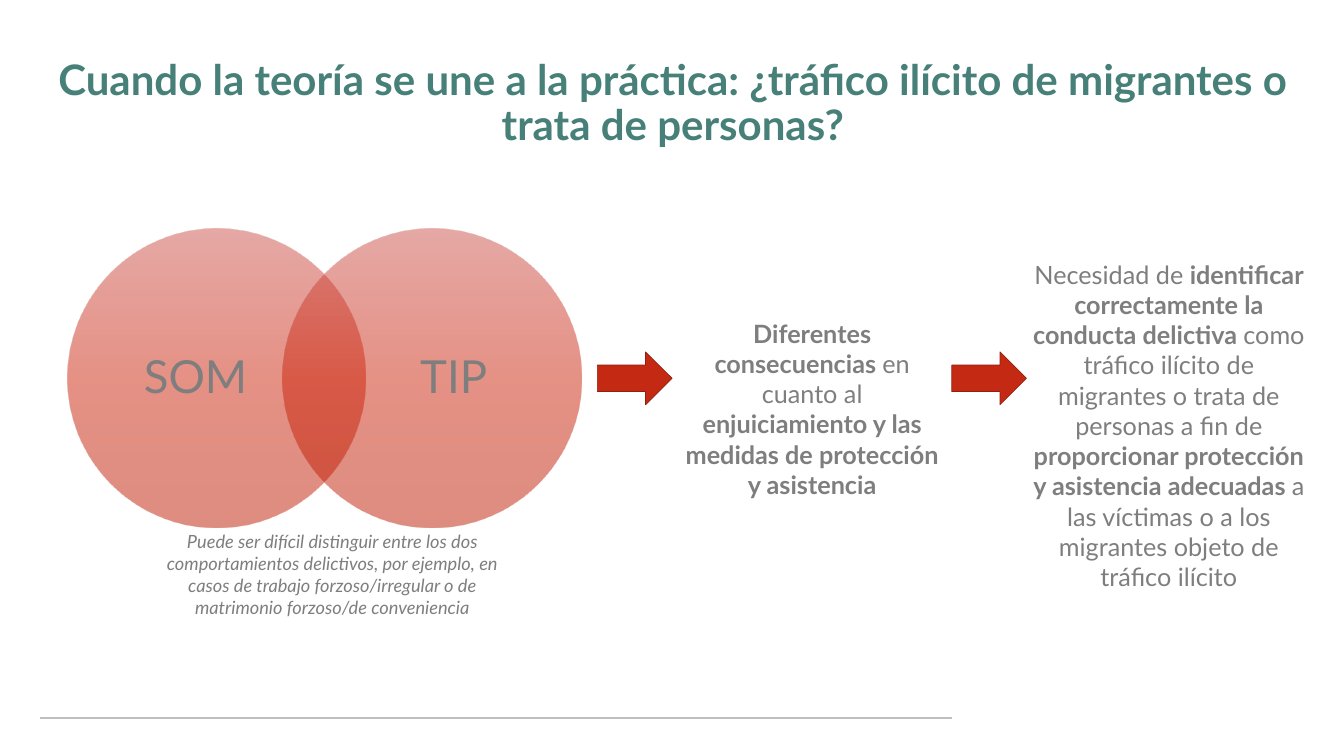
from dataclasses import dataclass

from lxml.etree import SubElement
from pptx import Presentation
from pptx.dml.color import RGBColor
from pptx.enum.shapes import MSO_CONNECTOR, MSO_SHAPE
from pptx.enum.text import MSO_ANCHOR, PP_ALIGN
from pptx.oxml.ns import qn
from pptx.slide import Slide
from pptx.util import Pt

FONT = "Lato"
TEAL = RGBColor(0x46, 0x80, 0x78)
GREY = RGBColor(0x7E, 0x7E, 0x7E)
RULE_GREY = RGBColor(0xBF, 0xBF, 0xBF)
ARROW_RED = RGBColor(0xC4, 0x2A, 0x13)
ARROW_EDGE = RGBColor(0x91, 0x1F, 0x0E)
CIRCLE_STOPS = (
    (0, RGBColor(0xCE, 0x52, 0x4C)),
    (50, RGBColor(0xCD, 0x23, 0x0A)),
    (100, RGBColor(0xBE, 0x1A, 0x01)),
)
CIRCLE_OPACITY = 50
CIRCLE_TOP, CIRCLE_SIZE = 326.9, 426.2
ARROW_TOP, ARROW_WIDTH, ARROW_HEIGHT = 502.6, 106.6, 75.6


@dataclass(frozen=True)
class Passage:
    left: float
    top: float
    width: float
    height: float
    size: float
    runs: tuple[tuple[str, bool], ...]
    color: RGBColor = GREY
    italic: bool = False
    anchor: MSO_ANCHOR = MSO_ANCHOR.TOP
    line_spacing: float = 1.0
    inset_x: float = 7.2
    inset_y: float = 3.6


@dataclass(frozen=True)
class Concept:
    name: str
    circle_left: float
    label_left: float


CONCEPTS = (Concept("SOM", 96.5, 156.2), Concept("TIP", 403.9, 524.9))
ARROW_LEFTS = (853.2, 1359.4)

TITLE = Passage(
    60.5, 71.3, 1800.7, 154.8, 60,
    (("Cuando la teoría se une a la práctica: ¿tráfico ilícito de migrantes o "
      "trata de personas?", True),),
    color=TEAL, anchor=MSO_ANCHOR.MIDDLE, line_spacing=0.9,
    inset_x=14.4, inset_y=7.2,
)
NEED = Passage(
    1465.9, 366.5, 406.8, 487.4, 36,
    (
        ("Necesidad de ", False),
        ("identificar correctamente la conducta delictiva ", True),
        ("como tráfico ilícito de migrantes o trata de personas a fin de ", False),
        ("proporcionar protección y asistencia adecuadas ", True),
        ("a las víctimas o a los migrantes objeto de tráfico ilícito", False),
    ),
)
CONSEQUENCES = Passage(
    971.3, 450.7, 377.3, 312.5, 36,
    (
        ("Diferentes consecuencias ", True),
        ("en cuanto al", False),
        (" enjuiciamiento y las medidas de protección y asistencia", True),
    ),
)
DIFFICULTY = Passage(
    205.2, 754.6, 539.3, 164.9, 26,
    (("Puede ser difícil distinguir entre los dos comportamientos delictivos, "
      "por ejemplo, en casos de trabajo forzoso/irregular o de matrimonio "
      "forzoso/de conveniencia", False),),
    italic=True,
)


def draw_passage(slide: Slide, passage: Passage) -> None:
    box = slide.shapes.add_textbox(
        Pt(passage.left), Pt(passage.top), Pt(passage.width), Pt(passage.height)
    )
    frame = box.text_frame
    frame.word_wrap = True
    frame.vertical_anchor = passage.anchor
    frame.margin_left = frame.margin_right = Pt(passage.inset_x)
    frame.margin_top = frame.margin_bottom = Pt(passage.inset_y)
    paragraph = frame.paragraphs[0]
    paragraph.alignment = PP_ALIGN.CENTER
    paragraph.line_spacing = passage.line_spacing
    paragraph.font.name = FONT
    paragraph.font.size = Pt(passage.size)
    paragraph.font.italic = passage.italic
    paragraph.font.color.rgb = passage.color
    for text, bold in passage.runs:
        run = paragraph.add_run()
        run.text = text
        run.font.bold = bold


def draw_concept(slide: Slide, concept: Concept) -> None:
    circle = slide.shapes.add_shape(
        MSO_SHAPE.OVAL, Pt(concept.circle_left), Pt(CIRCLE_TOP),
        Pt(CIRCLE_SIZE), Pt(CIRCLE_SIZE),
    )
    circle.shadow.inherit = False
    circle.line.fill.background()
    circle.fill.gradient()
    circle.fill.gradient_angle = 270
    stops = circle._element.spPr.find(qn("a:gradFill")).find(qn("a:gsLst"))
    for stop in list(stops):
        stops.remove(stop)
    for position, color in CIRCLE_STOPS:
        stop = SubElement(stops, qn("a:gs"), pos=str(position * 1000))
        tint = SubElement(stop, qn("a:srgbClr"), val=str(color))
        SubElement(tint, qn("a:alpha"), val=str(CIRCLE_OPACITY * 1000))
    draw_passage(slide, Passage(
        concept.label_left, 377.3, 246.2, 326.2, 65, ((concept.name, False),),
        anchor=MSO_ANCHOR.MIDDLE, line_spacing=0.9, inset_x=0, inset_y=0,
    ))


def draw_arrow(slide: Slide, left: float) -> None:
    arrow = slide.shapes.add_shape(
        MSO_SHAPE.RIGHT_ARROW, Pt(left), Pt(ARROW_TOP),
        Pt(ARROW_WIDTH), Pt(ARROW_HEIGHT),
    )
    arrow.shadow.inherit = False
    arrow.fill.solid()
    arrow.fill.fore_color.rgb = ARROW_RED
    arrow.line.color.rgb = ARROW_EDGE
    arrow.line.width = Pt(1)


def draw_footer_rule(slide: Slide) -> None:
    rule = slide.shapes.add_connector(
        MSO_CONNECTOR.STRAIGHT, Pt(57.6), Pt(1026), Pt(1359.4), Pt(1026)
    )
    rule.line.color.rgb = RULE_GREY
    rule.line.width = Pt(2.25)
    SubElement(rule._element.spPr, qn("a:effectLst"))


def main() -> None:
    presentation = Presentation()
    presentation.slide_width = Pt(1919.52)
    presentation.slide_height = Pt(1080)
    slide = presentation.slides.add_slide(presentation.slide_layouts[6])
    draw_footer_rule(slide)
    draw_passage(slide, TITLE)
    for concept in CONCEPTS:
        draw_concept(slide, concept)
    for left in ARROW_LEFTS:
        draw_arrow(slide, left)
    for passage in (CONSEQUENCES, NEED, DIFFICULTY):
        draw_passage(slide, passage)
    presentation.save("out.pptx")


if __name__ == "__main__":
    main()
